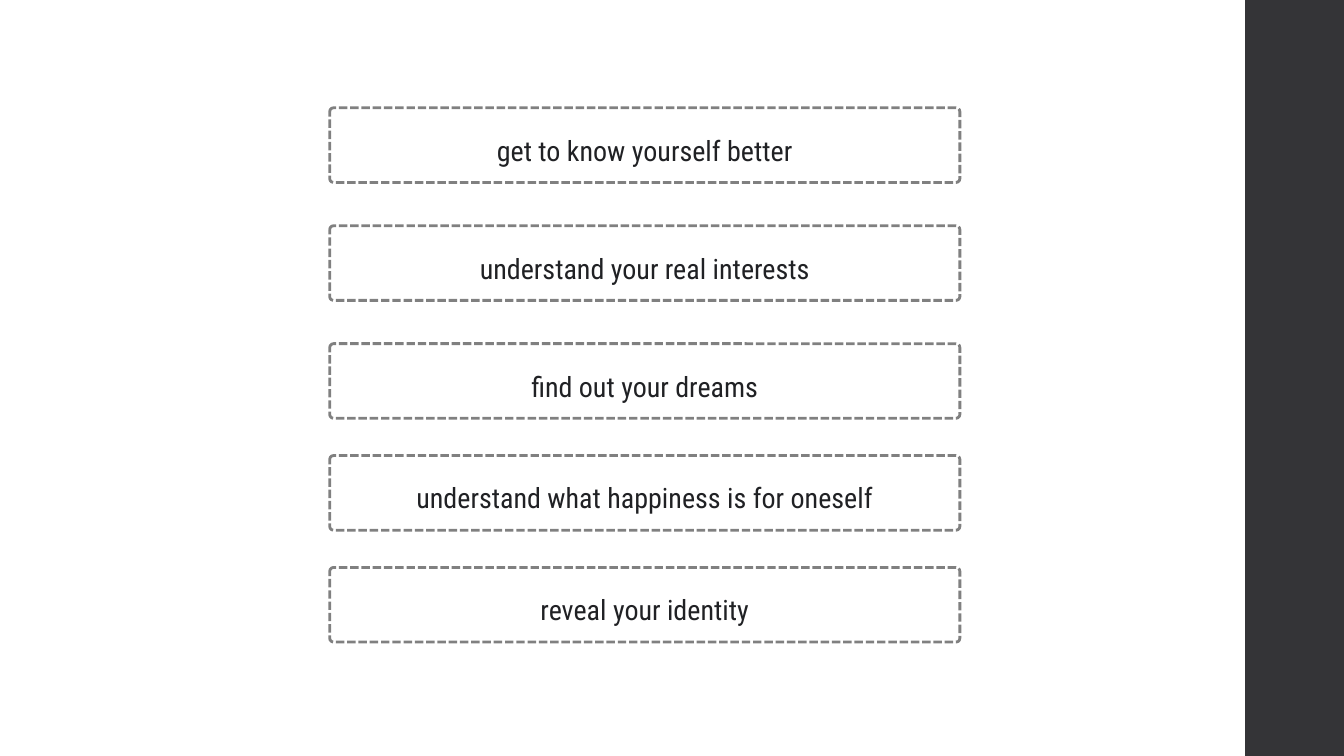
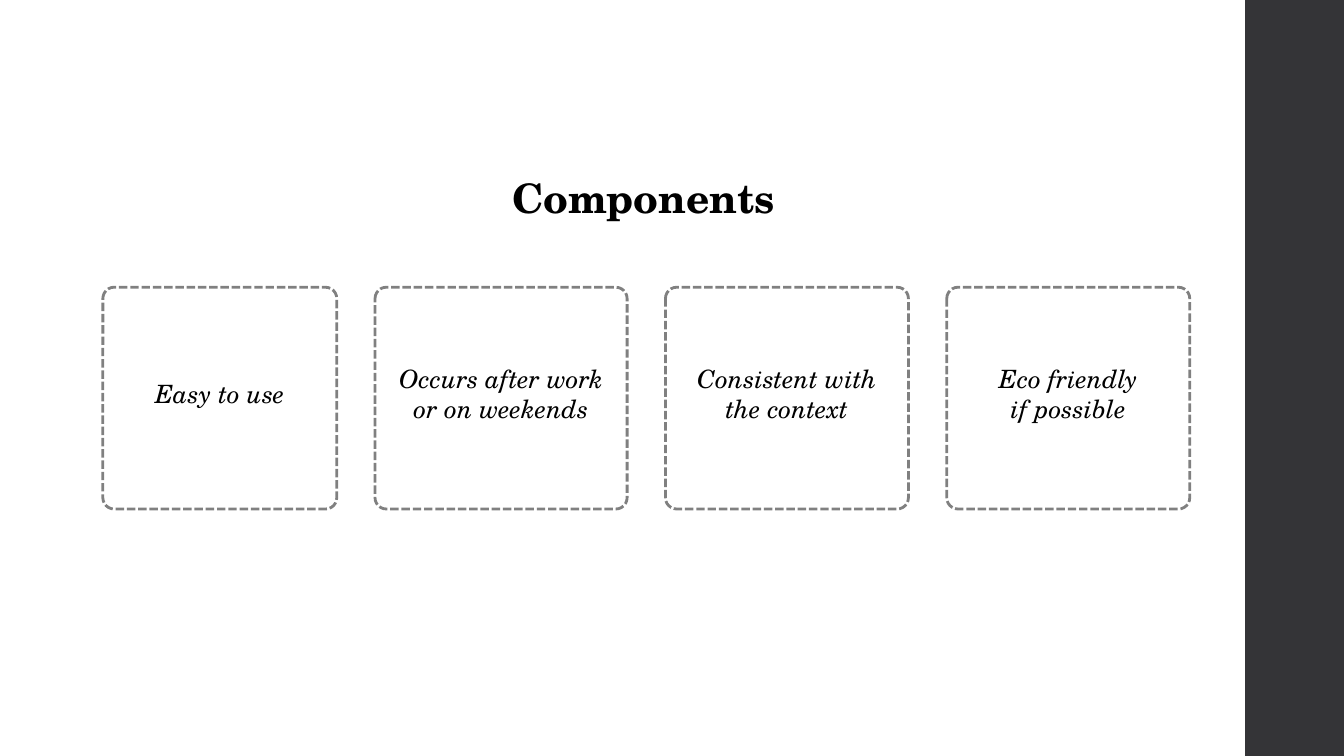
"""Build two slides of dashed cards beside a shared dark band."""
from pptx import Presentation
from pptx import util as u
from pptx.dml.color import RGBColor
from pptx.enum import dml, shapes, text

WIDE, HIGH = 13.33, 7.5
BAND = RGBColor(0x34, 0x34, 0x37)
DASH = RGBColor(0x80, 0x80, 0x80)
INK = RGBColor(0x20, 0x21, 0x24)
BLACK = RGBColor(0, 0, 0)
SANS, SERIF = "Roboto Condensed", "TeX Gyre Schola"

GOALS = [
    "get to know yourself better",
    "understand your real interests",
    "find out your dreams",
    "understand what happiness is for oneself",
    "reveal your identity",
]
STEPS = [1.17, 1.17, 1.11, 1.11, 0]
PARTS = [
    (2.32, ["Еasy to use"]),
    (2.5, ["Оccurs after work or on weekends"]),
    (2.41, ["Consistent with", "the context"]),
    (2.41, ["Eco friendly", "if possible"]),
]
GAP = 0.38


def inches(*sizes):
    """Turn plain numbers into lengths."""
    return [u.Inches(size) for size in sizes]


def write(frame, lines, face, size, color, space=None, bold=False, slant=False):
    """Fill a frame with centred lines."""
    frame.word_wrap = True
    for row, line in enumerate(lines):
        para = frame.add_paragraph() if row else frame.paragraphs[0]
        para.alignment = text.PP_ALIGN.CENTER
        if space:
            para.line_spacing = space
        run = para.add_run()
        run.text = line
        font = run.font
        font.name, font.size = face, u.Pt(size)
        font.bold, font.italic = bold, slant
        font.color.rgb = color


def card(slide, box, lift=0):
    """Draw a dashed card and return its text frame."""
    shape = slide.shapes.add_shape(shapes.MSO_SHAPE.ROUNDED_RECTANGLE, *inches(*box))
    shape.adjustments[0] = 0.051
    shape.shadow.inherit = False
    shape.fill.background()
    shape.line.color.rgb = DASH
    shape.line.width = u.Pt(2)
    shape.line.dash_style = dml.MSO_LINE.SQUARE_DOT
    frame = shape.text_frame
    frame.vertical_anchor = text.MSO_ANCHOR.MIDDLE
    frame.margin_left = frame.margin_right = u.Inches(0.07)
    frame.margin_top = u.Inches(0.05)
    frame.margin_bottom = u.Inches(0.05 + lift)
    return frame


def band(slide):
    """Put the side band on the layout that the slides share."""
    shape = slide.shapes.add_shape(
        shapes.MSO_SHAPE.RECTANGLE, *inches(12.35, 0, WIDE - 12.35, HIGH))
    shape.shadow.inherit = False
    shape.fill.solid()
    shape.fill.fore_color.rgb = BAND
    shape.line.fill.background()
    shape.element.nvSpPr.cNvPr.set("id", "20")
    slide.slide_layout.shapes.element.append(shape.element)


def title(slide, words):
    """Write the slide's heading."""
    box = slide.shapes.add_textbox(*inches(3.05, 1.67, 6.67, 0.59))
    write(box.text_frame, [words], SERIF, 29, BLACK, bold=True)


def goals(slide):
    """Stack the goals in one column."""
    top = 1.07
    for goal, step in zip(GOALS, STEPS):
        frame = card(slide, (3.27, top, 6.25, 0.74))
        write(frame, [goal], SANS, 20, INK, space=1.29)
        top += step


def parts(slide):
    """Set the components side by side."""
    title(slide, "Components")
    left = 1.02
    for width, lines in PARTS:
        frame = card(slide, (left, 2.85, width, 2.2), lift=0.1)
        write(frame, lines, SERIF, 18, BLACK, slant=True)
        left += width + GAP


def main():
    """Build and save the deck."""
    deck = Presentation()
    deck.slide_width, deck.slide_height = inches(WIDE, HIGH)
    blank = deck.slide_layouts[6]
    first, second = [deck.slides.add_slide(blank) for _ in range(2)]
    band(first)
    goals(first)
    parts(second)
    deck.save("out.pptx")


if __name__ == "__main__":
    main()
